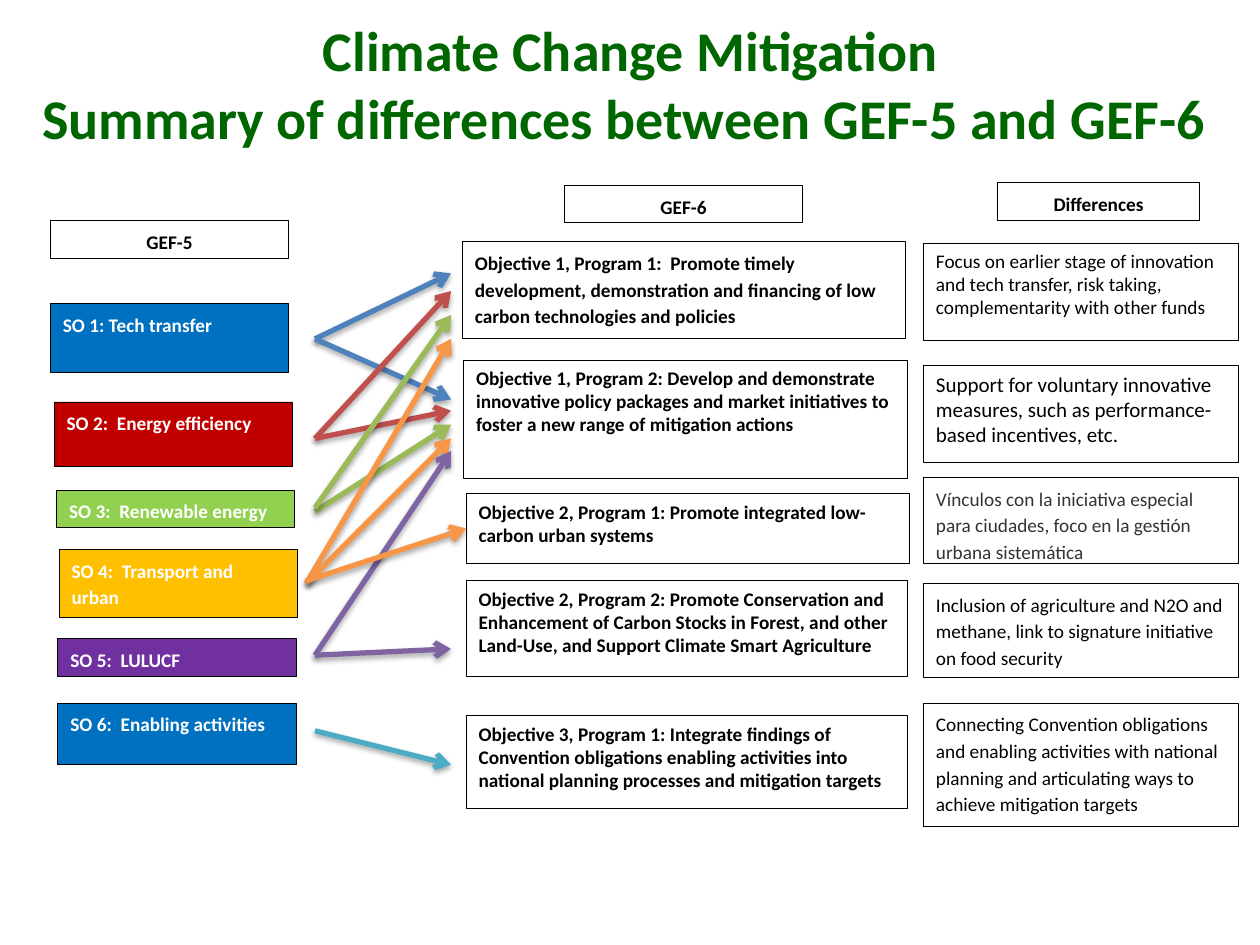
from dataclasses import dataclass

import pptx
import pptx.dml.color
import pptx.enum.shapes
import pptx.enum.text
import pptx.oxml
import pptx.oxml.ns
import pptx.util
from pptx.util import Inches

FONT = "Calibri"
ALIGN = pptx.enum.text.PP_ALIGN
NARROW, MIDDLE, WIDE = 1.89, 3.52, 2.5
MIDDLE_LEFT, RIGHT_LEFT = 3.7, 7.33
ARROW_START, ARROW_END = 2.5, 3.58


@dataclass
class Box:
    text: str
    left: float
    top: float
    width: float
    height: float
    fill: str = "FFFFFF"
    color: str = "000000"
    size: float = 11
    bold: bool = True
    spacing: float = 1.0
    align: ALIGN = ALIGN.LEFT


@dataclass
class Arrow:
    start_y: float
    end_y: float
    color: str
    start_x: float = ARROW_START


def header(text: str, left: float, top: float, width: float) -> Box:
    return Box(text, left, top, width, 0.3, spacing=1.15, align=ALIGN.CENTER)


def strategic_objective(text: str, left: float, top: float, height: float, fill: str) -> Box:
    return Box(text, left, top, NARROW, height, fill, "FFFFFF", spacing=1.15)


def difference(text: str, top: float, height: float, **style) -> Box:
    return Box(text, RIGHT_LEFT, top, WIDE, height, bold=False, **style)


URBAN_BOX = Box("Objective 2, Program 1: Promote integrated low-carbon urban systems",
                MIDDLE_LEFT, 3.92, MIDDLE, 0.55)

BOXES = [
    header("GEF-5", 0.4, 1.75, NARROW),
    strategic_objective("SO 1: Tech transfer", 0.4, 2.41, 0.55, "0070C0"),
    strategic_objective("SO 2:  Energy efficiency", 0.43, 3.19, 0.51, "C00000"),
    strategic_objective("SO 3:  Renewable energy", 0.45, 3.89, 0.3, "92D050"),
    strategic_objective("SO 4:  Transport and urban", 0.47, 4.36, 0.54, "FFC000"),
    strategic_objective("SO 5:  LULUCF", 0.46, 5.07, 0.3, "7030A0"),
    strategic_objective("SO 6:  Enabling activities", 0.46, 5.58, 0.49, "0070C0"),
    header("GEF-6", 4.48, 1.47, NARROW),
    Box("Objective 1, Program 1:  Promote timely development, demonstration and "
        "financing of low carbon technologies and policies",
        3.67, 1.92, MIDDLE, 0.77, spacing=1.15),
    Box("Objective 1, Program 2: Develop and demonstrate innovative policy packages and "
        "market initiatives to foster a new range of mitigation actions",
        3.68, 2.86, MIDDLE, 0.94),
    URBAN_BOX,
    Box("Objective 2, Program 2: Promote Conservation and Enhancement of Carbon Stocks in "
        "Forest, and other Land-Use, and Support Climate Smart Agriculture",
        MIDDLE_LEFT, 4.61, 3.5, 0.76),
    Box("Objective 3, Program 1: Integrate findings of Convention obligations enabling "
        "activities into national planning processes and mitigation targets",
        MIDDLE_LEFT, 5.68, 3.5, 0.74),
    header("Differences", 7.92, 1.45, 1.6),
    difference("Focus on earlier stage of innovation and tech transfer, risk taking, "
               "complementarity with other funds", 1.93, 0.77),
    difference("Support for voluntary innovative measures, such as performance-based "
               "incentives, etc.", 2.9, 0.77, size=12),
    difference("Vínculos con la iniciativa especial para ciudades, foco en la gestión "
               "urbana sistemática", 3.79, 0.68, color="333333", spacing=1.15),
    difference("Inclusion of agriculture and N2O and methane, link to signature initiative "
               "on food security", 4.63, 0.75, spacing=1.15),
    difference("Connecting Convention obligations and enabling activities with national "
               "planning and articulating ways to achieve mitigation targets",
               5.58, 0.98, spacing=1.15),
]

BLUE, RED, GREEN, ORANGE, PURPLE, TEAL = (
    "4F81BD", "C0504D", "9BBB59", "F79646", "8064A2", "4BACC6")
ORANGE_START = 2.43
ARROWS = [
    Arrow(2.69, 2.17, BLUE), Arrow(2.69, 3.17, BLUE),
    Arrow(3.48, 2.31, RED), Arrow(3.48, 3.26, RED),
    Arrow(4.06, 3.37, GREEN), Arrow(4.03, 2.5, GREEN),
    Arrow(4.63, 2.69, ORANGE, ORANGE_START), Arrow(4.63, 3.48, ORANGE, ORANGE_START),
    Arrow(5.2, 3.58, PURPLE), Arrow(5.2, 5.15, PURPLE),
    Arrow(5.8, 6.07, TEAL),
]
URBAN_ARROW = Arrow(4.61, 4.2, ORANGE, ORANGE_START)

SHADOW_XML = (
    f'<a:effectLst {pptx.oxml.ns.nsdecls("a")}>'
    '<a:outerShdw blurRad="40000" dist="23000" dir="5400000" rotWithShape="0">'
    '<a:srgbClr val="000000"><a:alpha val="35000"/></a:srgbClr>'
    '</a:outerShdw></a:effectLst>')
ARROWHEAD_XML = f'<a:tailEnd {pptx.oxml.ns.nsdecls("a")} type="arrow"/>'


def rgb(color: str) -> pptx.dml.color.RGBColor:
    return pptx.dml.color.RGBColor.from_string(color)


def format_font(font, color: str, **values) -> None:
    for name, value in {"name": FONT, **values}.items():
        setattr(font, name, value)
    font.color.rgb = rgb(color)


def draw_title(slide, text: str) -> None:
    title = slide.shapes.title
    position = {"left": 0.08, "top": 0.02, "width": 9.75, "height": 1.28}
    for name, value in position.items():
        setattr(title, name, Inches(value))
    frame = title.text_frame
    frame.text = text
    frame.auto_size = pptx.enum.text.MSO_AUTO_SIZE.NONE
    frame.vertical_anchor = pptx.enum.text.MSO_ANCHOR.MIDDLE
    paragraph = frame.paragraphs[0]
    paragraph.alignment = ALIGN.CENTER
    for run in paragraph.runs:
        format_font(run.font, "006600", size=pptx.util.Pt(32), bold=True)


def draw_box(slide, box: Box):
    shape = slide.shapes.add_shape(
        pptx.enum.shapes.MSO_SHAPE.RECTANGLE,
        Inches(box.left), Inches(box.top), Inches(box.width), Inches(box.height))
    shape.shadow.inherit = False
    shape.fill.solid()
    shape.fill.fore_color.rgb = rgb(box.fill)
    shape.line.color.rgb = rgb("000000")
    shape.line.width = pptx.util.Pt(0.5)
    frame = shape.text_frame
    frame.word_wrap = True
    frame.vertical_anchor = pptx.enum.text.MSO_ANCHOR.TOP
    paragraph = frame.paragraphs[0]
    paragraph.alignment = box.align
    paragraph.line_spacing = box.spacing
    run = paragraph.add_run()
    run.text = box.text
    format_font(run.font, box.color, size=pptx.util.Pt(box.size), bold=box.bold)
    return shape


def draw_arrow(slide, arrow: Arrow):
    connector = slide.shapes.add_connector(
        pptx.enum.shapes.MSO_CONNECTOR.STRAIGHT,
        Inches(arrow.start_x), Inches(arrow.start_y),
        Inches(ARROW_END), Inches(arrow.end_y))
    connector.line.color.rgb = rgb(arrow.color)
    connector.line.width = pptx.util.Pt(3)
    properties = connector._element.spPr
    line = properties.find(pptx.oxml.ns.qn("a:ln"))
    line.append(pptx.oxml.parse_xml(ARROWHEAD_XML))
    properties.append(pptx.oxml.parse_xml(SHADOW_XML))
    return connector


def main() -> None:
    presentation = pptx.Presentation()
    presentation.slide_width, presentation.slide_height = Inches(10), Inches(7.5)
    slide = presentation.slides.add_slide(presentation.slide_layouts[5])
    draw_title(slide, " Climate Change Mitigation\v"
                      "Summary of differences between GEF-5 and GEF-6")
    shapes = {box.text: draw_box(slide, box) for box in BOXES}
    for arrow in ARROWS:
        draw_arrow(slide, arrow)
    draw_arrow(slide, URBAN_ARROW).end_connect(shapes[URBAN_BOX.text], 1)
    presentation.save("out.pptx")


if __name__ == "__main__":
    main()
